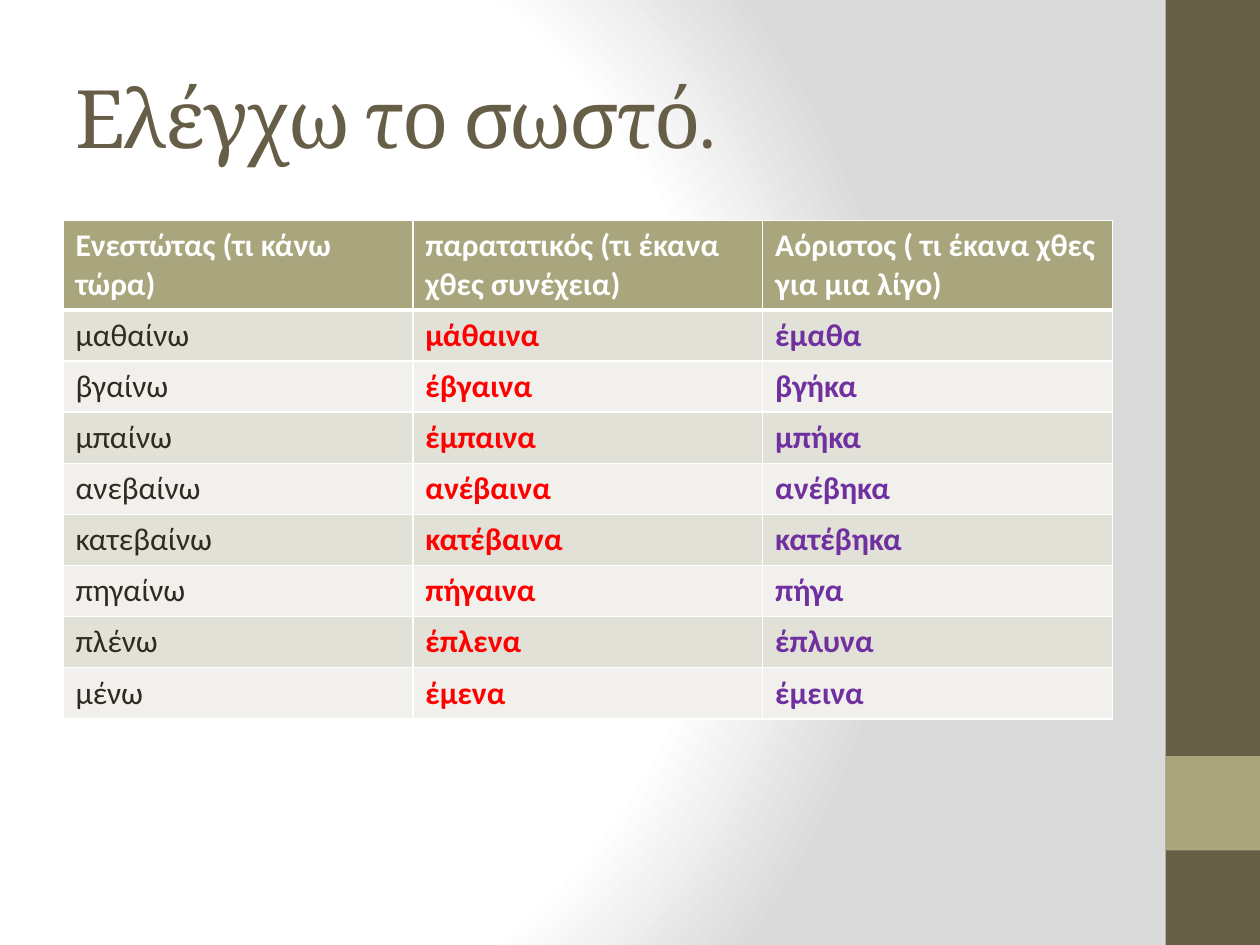
from dataclasses import dataclass

from lxml.etree import SubElement
from pptx import Presentation
from pptx.dml.color import RGBColor
from pptx.enum.shapes import MSO_SHAPE
from pptx.enum.text import MSO_ANCHOR, PP_ALIGN
from pptx.oxml.ns import qn
from pptx.util import Inches, Pt


@dataclass(frozen=True)
class Theme:
    heading_font: str = "Cambria"
    body_font: str = "Calibri"
    title_size: int = 46
    table_size: int = 18
    brown: str = "675E47"
    olive: str = "A9A57C"
    white: str = "FFFFFF"
    gray: str = "DADADA"
    ink: str = "2F2B20"
    red: str = "FF0000"
    purple: str = "7030A0"
    bands: tuple = ("E2E1D7", "F1F0EC")


THEME = Theme()
WIDTH, HEIGHT = Inches(10), Inches(7.5)
MARGIN, CONTENT_WIDTH = Inches(0.5), Inches(8.33)
SIDEBAR_UNIT = Inches(0.75)
HEADER_HEIGHT, ROW_HEIGHT = Inches(0.7), Inches(0.405)
THIN, THICK = Pt(1), Pt(3)

HEADERS = (
    "Ενεστώτας (τι κάνω τώρα)",
    "παρατατικός (τι έκανα χθες συνέχεια)",
    "Αόριστος ( τι έκανα χθες για μια λίγο)",
)
VERBS = (
    ("μαθαίνω", "μάθαινα", "έμαθα"),
    ("βγαίνω", "έβγαινα", "βγήκα"),
    ("μπαίνω", "έμπαινα", "μπήκα"),
    ("ανεβαίνω", "ανέβαινα", "ανέβηκα"),
    ("κατεβαίνω", "κατέβαινα", "κατέβηκα"),
    ("πηγαίνω", "πήγαινα", "πήγα"),
    ("πλένω", "έπλενα", "έπλυνα"),
    ("μένω", "έμενα", "έμεινα"),
)


def write_text(text_frame, text, *, font, size, color, bold=False, spacing=None):
    """Write one left-aligned run; spacing is in points between letters."""
    paragraph = text_frame.paragraphs[0]
    paragraph.alignment = PP_ALIGN.LEFT
    run = paragraph.add_run()
    run.text = text
    run.font.name = font
    run.font.size = Pt(size)
    run.font.bold = bold
    run.font.color.rgb = RGBColor.from_string(color)
    if spacing is not None:
        run.font._element.set("spc", str(spacing * 100))


def set_background(slide):
    """Fill the background with a circular gradient centred left of the middle."""
    slide.background.fill.gradient()
    gradient = slide.element.find(".//" + qn("a:gradFill"))
    for child in list(gradient):
        gradient.remove(child)
    stops = SubElement(gradient, qn("a:gsLst"))
    for percent, color in ((0, THEME.white), (75, THEME.white), (100, THEME.gray)):
        stop = SubElement(stops, qn("a:gs"), pos=str(percent * 1000))
        SubElement(stop, qn("a:srgbClr"), val=color)
    circle = SubElement(gradient, qn("a:path"), path="circle")
    SubElement(circle, qn("a:fillToRect"), l="20000", t="50000", r="100000", b="50000")


def add_block(slide, top, height, color):
    """Add a filled rectangle along the right edge of the slide."""
    shape = slide.shapes.add_shape(
        MSO_SHAPE.RECTANGLE, WIDTH - SIDEBAR_UNIT, top, SIDEBAR_UNIT, height
    )
    shape.shadow.inherit = False
    shape.fill.solid()
    shape.fill.fore_color.rgb = RGBColor.from_string(color)
    shape.line.fill.background()


def add_title(slide, text):
    title = slide.shapes.title
    title.left, title.top = MARGIN, Inches(0.3)
    title.width, title.height = CONTENT_WIDTH, Inches(1.25)
    title.text_frame.vertical_anchor = MSO_ANCHOR.MIDDLE
    write_text(title.text_frame, text, font=THEME.heading_font,
               size=THEME.title_size, color=THEME.brown, spacing=-1)


def set_borders(cell, top, bottom):
    properties = cell._tc.get_or_add_tcPr()
    for side, width in (("L", THIN), ("R", THIN), ("T", top), ("B", bottom)):
        line = SubElement(properties, qn(f"a:ln{side}"), w=str(width))
        fill = SubElement(line, qn("a:solidFill"))
        SubElement(fill, qn("a:srgbClr"), val=THEME.white)


def format_cell(cell, text, *, fill, color, bold, top=THIN, bottom=THIN):
    set_borders(cell, top, bottom)
    cell.fill.solid()
    cell.fill.fore_color.rgb = RGBColor.from_string(fill)
    write_text(cell.text_frame, text, font=THEME.body_font,
               size=THEME.table_size, color=color, bold=bold)


def add_verb_table(slide):
    table = slide.shapes.add_table(
        len(VERBS) + 1, len(HEADERS), MARGIN, Inches(1.75),
        CONTENT_WIDTH, HEADER_HEIGHT + ROW_HEIGHT * len(VERBS),
    ).table
    for row in table.rows:
        row.height = ROW_HEIGHT
    table.rows[0].height = HEADER_HEIGHT

    for column, header in enumerate(HEADERS):
        format_cell(table.cell(0, column), header, fill=THEME.olive,
                    color=THEME.white, bold=True, bottom=THICK)
    column_colors = (THEME.ink, THEME.red, THEME.purple)
    for index, forms in enumerate(VERBS):
        for column, (form, color) in enumerate(zip(forms, column_colors)):
            format_cell(table.cell(index + 1, column), form,
                        fill=THEME.bands[index % 2], color=color,
                        bold=column > 0, top=THIN if index else THICK)


def main():
    presentation = Presentation()
    presentation.slide_width, presentation.slide_height = WIDTH, HEIGHT
    slide = presentation.slides.add_slide(
        presentation.slide_layouts.get_by_name("Title Only")
    )
    set_background(slide)
    add_block(slide, 0, HEIGHT, THEME.brown)
    add_block(slide, SIDEBAR_UNIT * 8, SIDEBAR_UNIT, THEME.olive)
    add_title(slide, "Ελέγχω το σωστό.")
    add_verb_table(slide)
    presentation.save("out.pptx")


if __name__ == "__main__":
    main()
